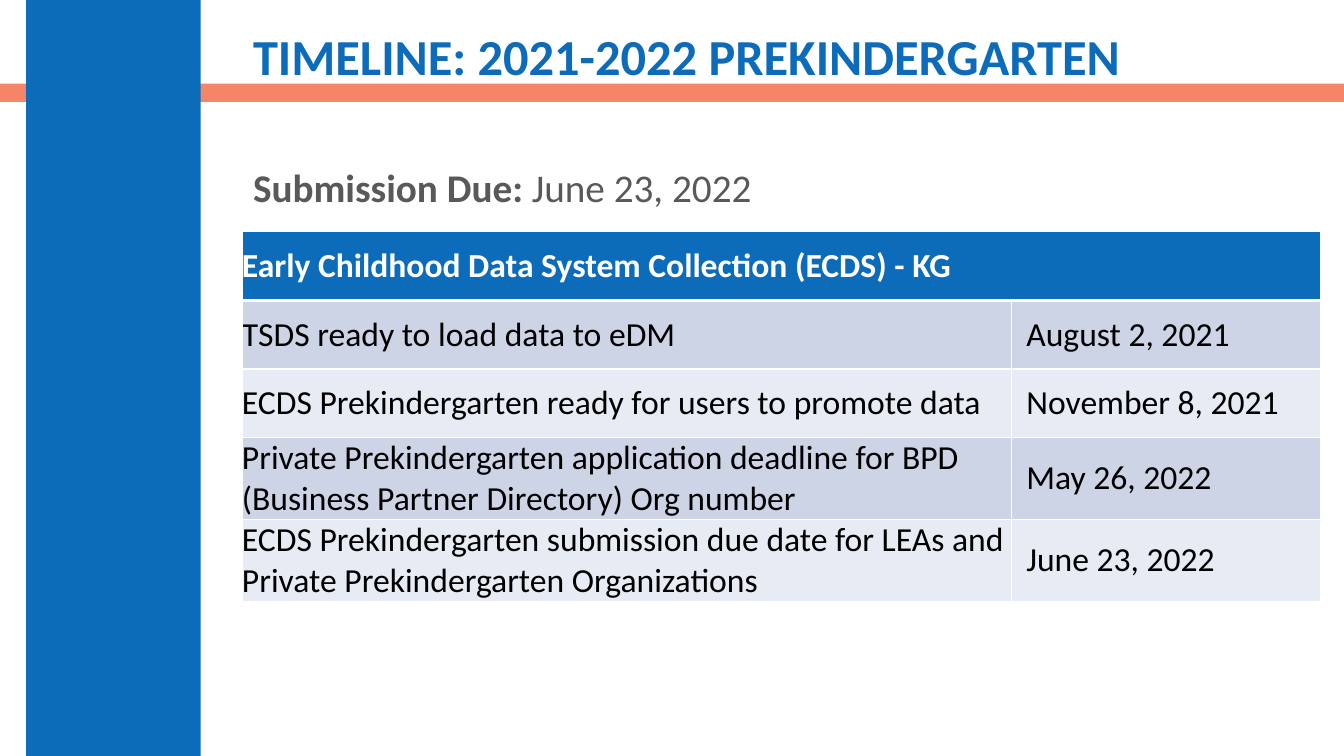
from dataclasses import dataclass

from lxml.etree import SubElement
from pptx import Presentation
from pptx.dml.color import RGBColor
from pptx.enum.shapes import MSO_SHAPE
from pptx.enum.text import MSO_ANCHOR, MSO_AUTO_SIZE, PP_ALIGN
from pptx.oxml.ns import qn
from pptx.util import Inches, Pt

BLUE = RGBColor(0x0D, 0x6C, 0xB9)
ORANGE = RGBColor(0xF1, 0x60, 0x38)
GRAY = RGBColor(0x59, 0x59, 0x59)
BLACK = RGBColor(0x00, 0x00, 0x00)
WHITE = RGBColor(0xFF, 0xFF, 0xFF)
BAND_DARK = RGBColor(0xCC, 0xD4, 0xE6)
BAND_LIGHT = RGBColor(0xE7, 0xEB, 0xF3)
FONT = "Calibri"


@dataclass
class Bar:
    left: float
    top: float
    width: float
    height: float
    color: RGBColor
    opacity: int = 100


@dataclass
class Milestone:
    task: str
    date: str


BARS = [
    Bar(0, 0.83, 13.33, 0.18, ORANGE, opacity=76),
    Bar(0.26, 0, 1.73, 7.5, BLUE),
]
TABLE_HEADING = "Early Childhood Data System Collection (ECDS) - KG"
MILESTONES = [
    Milestone("TSDS ready to load data to eDM", "August 2, 2021"),
    Milestone("ECDS Prekindergarten ready for users to promote data", "November 8, 2021"),
    Milestone("Private Prekindergarten application deadline for BPD "
              "(Business Partner Directory) Org number", "May 26, 2022"),
    Milestone("ECDS Prekindergarten submission due date for LEAs and "
              "Private Prekindergarten Organizations", "June 23, 2022"),
]
COLUMN_WIDTHS = (7.63, 3.07)
ROW_HEIGHT = 0.68
DATE_INDENT = 0.15


def style_font(font, size: float, color: RGBColor) -> None:
    font.name = FONT
    font.size = Pt(size)
    font.color.rgb = color


def add_bar(slide, bar: Bar) -> None:
    """Draw a decorative bar behind the title."""
    shape = slide.shapes.add_shape(
        MSO_SHAPE.RECTANGLE, Inches(bar.left), Inches(bar.top),
        Inches(bar.width), Inches(bar.height))
    shape.shadow.inherit = False
    shape.line.fill.background()
    shape.fill.solid()
    shape.fill.fore_color.rgb = bar.color
    if bar.opacity < 100:
        color = shape.element.spPr.find(f"{qn('a:solidFill')}/{qn('a:srgbClr')}")
        SubElement(color, qn("a:alpha"), val=str(bar.opacity * 1000))
    slide.shapes.title.element.addprevious(shape.element)


def place(placeholder, left: float, top: float, width: float, height: float,
          anchor: MSO_ANCHOR):
    """Move a placeholder and return its first paragraph."""
    placeholder.left, placeholder.top = Inches(left), Inches(top)
    placeholder.width, placeholder.height = Inches(width), Inches(height)
    frame = placeholder.text_frame
    frame.word_wrap = True
    frame.auto_size = MSO_AUTO_SIZE.NONE
    frame.vertical_anchor = anchor
    paragraph = frame.paragraphs[0]
    paragraph.alignment = PP_ALIGN.LEFT
    paragraph.line_spacing = 0.9
    paragraph.space_before = Pt(0)
    return paragraph


def style_cell(cell, text: str, fill: RGBColor, color: RGBColor,
               bold: bool = False, indent: float = 0, bottom: float = 1) -> None:
    cell.margin_left = Inches(indent)
    cell.margin_top = cell.margin_right = cell.margin_bottom = 0
    cell.vertical_anchor = MSO_ANCHOR.MIDDLE
    cell.text = text
    font = cell.text_frame.paragraphs[0].font
    style_font(font, 24, color)
    font.bold = bold
    # Borders come before the fill
    properties = cell._tc.get_or_add_tcPr()
    for side, width in (("L", 1), ("R", 1), ("T", 1), ("B", bottom)):
        line = SubElement(properties, qn(f"a:ln{side}"), w=str(Pt(width)))
        solid = SubElement(line, qn("a:solidFill"))
        SubElement(solid, qn("a:srgbClr"), val=str(WHITE))
    cell.fill.solid()
    cell.fill.fore_color.rgb = fill


def add_timeline(slide, milestones: list[Milestone]) -> None:
    row_count = len(milestones) + 1
    table = slide.shapes.add_table(
        row_count, len(COLUMN_WIDTHS), Inches(2.4), Inches(2.3),
        Inches(sum(COLUMN_WIDTHS)), Inches(ROW_HEIGHT * row_count)).table
    table.first_row = table.horz_banding = False
    for column, width in zip(table.columns, COLUMN_WIDTHS):
        column.width = Inches(width)
    for row in table.rows:
        row.height = Inches(ROW_HEIGHT)

    # Heading across both columns
    table.cell(0, 0).merge(table.cell(0, 1))
    for column, text in enumerate((TABLE_HEADING, "")):
        style_cell(table.cell(0, column), text, BLUE, WHITE, bold=True, bottom=3)

    # One banded row per milestone
    for row, milestone in enumerate(milestones, start=1):
        band = BAND_DARK if row % 2 else BAND_LIGHT
        style_cell(table.cell(row, 0), milestone.task, band, BLACK)
        style_cell(table.cell(row, 1), milestone.date, band, BLACK, indent=DATE_INDENT)


def main() -> None:
    deck = Presentation()
    deck.slide_width, deck.slide_height = Inches(13.33), Inches(7.5)
    slide = deck.slides.add_slide(deck.slide_layouts[1])

    # Background bars
    for bar in BARS:
        add_bar(slide, bar)

    # Title
    heading = place(slide.shapes.title, 2.41, 0.18, 10.53, 0.82, MSO_ANCHOR.MIDDLE)
    heading.text = "TIMELINE: 2021-2022 PREKINDERGARTEN"
    style_font(heading.font, 36, BLUE)
    heading.font.bold = True

    # Submission date
    due = place(slide.placeholders[1], 2.41, 1.62, 9.83, 4.76, MSO_ANCHOR.TOP)
    due_properties = due._p.get_or_add_pPr()
    due_properties.set("marL", "0")
    due_properties.set("indent", "0")
    SubElement(due_properties, qn("a:buNone"))
    style_font(due.font, 28, GRAY)
    for text, bold in (("Submission Due: ", True), ("June 23, 2022", False)):
        run = due.add_run()
        run.text = text
        run.font.bold = bold

    # Timeline table
    add_timeline(slide, MILESTONES)
    deck.save("out.pptx")


if __name__ == "__main__":
    main()
